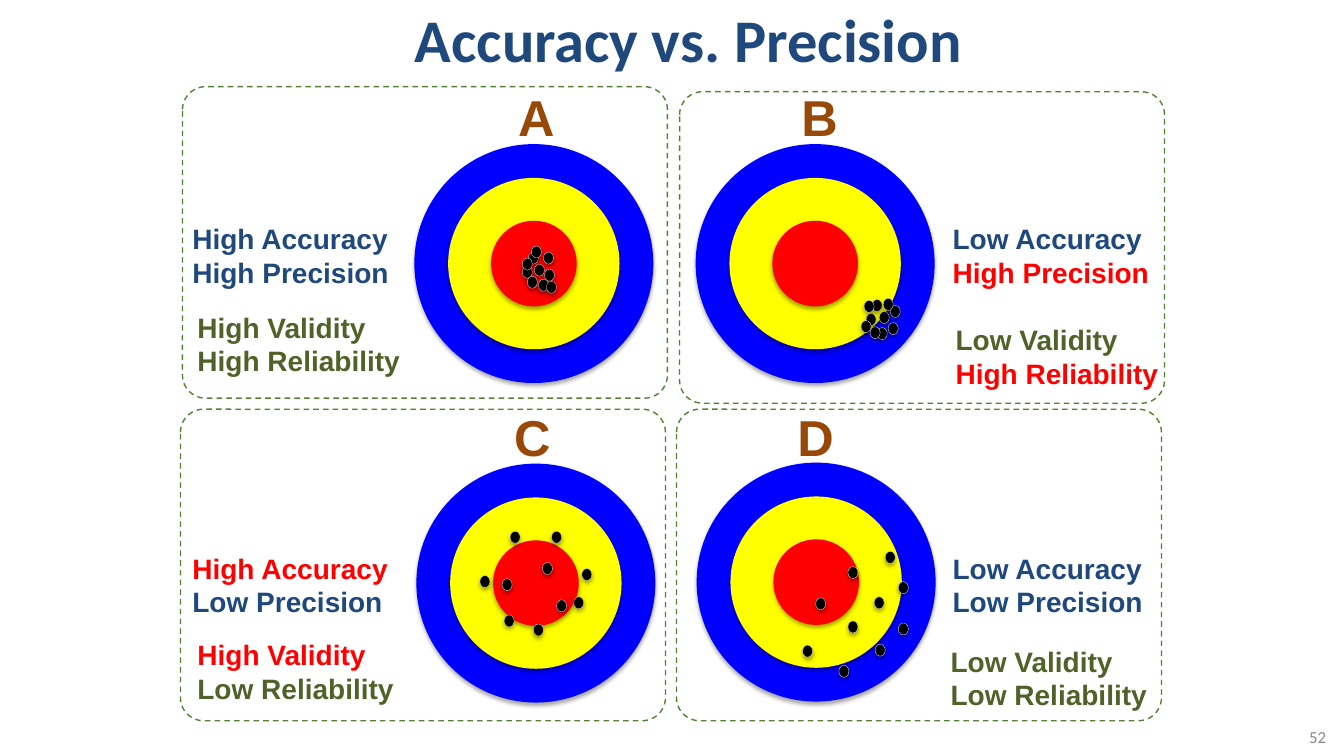
from dataclasses import dataclass

from lxml import etree
from pptx import Presentation
from pptx.dml.color import RGBColor
from pptx.enum.dml import MSO_LINE
from pptx.enum.shapes import MSO_SHAPE
from pptx.enum.text import MSO_ANCHOR, PP_ALIGN
from pptx.oxml.ns import qn
from pptx.util import Inches, Pt

OVAL = MSO_SHAPE.OVAL
ROUNDED = MSO_SHAPE.ROUNDED_RECTANGLE
DASH = MSO_LINE.DASH
TOP, MIDDLE = MSO_ANCHOR.TOP, MSO_ANCHOR.MIDDLE
LEFT, CENTER, RIGHT = PP_ALIGN.LEFT, PP_ALIGN.CENTER, PP_ALIGN.RIGHT

NAVY = RGBColor(0x1F, 0x49, 0x7D)
OLIVE = RGBColor(0x4F, 0x62, 0x28)
BROWN = RGBColor(0x98, 0x48, 0x07)
GREEN = RGBColor(0x54, 0x82, 0x35)
BLUE = RGBColor(0x00, 0x00, 0xFF)
YELLOW = RGBColor(0xFF, 0xFF, 0x00)
RED = RGBColor(0xFF, 0x00, 0x00)
BLACK = RGBColor(0x00, 0x00, 0x00)
PALE_GRAY = RGBColor(0xD9, 0xD9, 0xD9)
PAGE_GRAY = RGBColor(0x89, 0x89, 0x89)

PANEL_SIZE = (4.81, 3.09)
RINGS = [(2.37, BLUE), (1.7, YELLOW), (0.85, RED)]
SHOT_SIZE = (0.1, 0.12)


@dataclass
class Panel:
    letter: str
    corner: tuple
    letter_at: tuple
    target_at: tuple
    accuracy_at: tuple
    accuracy: list
    validity_at: tuple
    validity: list
    shots: list


PANELS = [
    Panel("A", (1.81, 0.86), (3.23, -0.05), (2.3, 0.57),
          (0, 1.29), [("High Accuracy", NAVY), ("High Precision", NAVY)],
          (0.05, 2.17), [("High Validity", OLIVE), ("High Reliability", OLIVE)],
          [(1.13, 1.07), (1.19, 1.19), (1.07, 1.21), (1.23, 1.34), (1.31, 1.36),
           (1.12, 1.31), (1.29, 1.24), (1.16, 1.01), (1.07, 1.13), (1.28, 1.07)]),
    Panel("B", (6.74, 0.91), (1.11, -0.1), (0.16, 0.52),
          (2.61, 1.24), [("Low Accuracy", NAVY), ("High Precision", RED)],
          (2.64, 2.24), [("Low Validity", OLIVE), ("High Reliability", RED)],
          [(1.75, 1.54), (1.82, 1.66), (1.69, 1.68), (1.8, 1.82), (1.93, 1.6),
           (1.91, 1.77), (1.86, 1.53), (1.67, 1.55), (1.64, 1.75), (1.73, 1.81)]),
    Panel("C", (1.79, 4.06), (3.21, -0.08), (2.34, 0.54),
          (0.02, 1.36), [("High Accuracy", RED), ("Low Precision", NAVY)],
          (0.07, 2.22), [("High Validity", RED), ("Low Reliability", OLIVE)],
          [(0.93, 0.67), (1.39, 1.35), (0.63, 1.11), (1.56, 1.32), (0.85, 1.14),
           (0.87, 1.5), (1.16, 1.59), (1.34, 0.67), (1.25, 0.98), (1.64, 1.04)]),
    Panel("D", (6.71, 4.06), (1.1, -0.08), (0.2, 0.53),
          (2.64, 1.36), [("Low Accuracy", NAVY), ("Low Precision", NAVY)],
          (2.62, 2.28), [("Low Validity", OLIVE), ("Low Reliability", OLIVE)],
          [(1.87, 0.88), (1.77, 1.8), (1.18, 1.34), (2, 1.18), (1.76, 1.33),
           (1.5, 1.57), (1.5, 1.03), (2, 1.59), (1.41, 2.01), (1.05, 1.81)]),
]


def offset(origin, step):
    return origin[0] + step[0], origin[1] + step[1]


def add_text(slide, corner, size, lines, points, font="Arial", bold=True,
             align=LEFT, anchor=TOP):
    box = slide.shapes.add_textbox(*map(Inches, corner + size))
    frame = box.text_frame
    frame.word_wrap = True
    frame.vertical_anchor = anchor
    for index, (words, color) in enumerate(lines):
        paragraph = frame.add_paragraph() if index else frame.paragraphs[0]
        paragraph.alignment = align
        run = paragraph.add_run()
        run.text = words
        run.font.name = font
        run.font.size = Pt(points)
        run.font.bold = bold
        run.font.color.rgb = color


def add_disc(shapes, corner, size, color):
    disc = shapes.add_shape(OVAL, *map(Inches, corner + size))
    disc.fill.solid()
    disc.fill.fore_color.rgb = color
    disc.line.fill.background()
    disc.shadow.inherit = False
    effects = disc._element.spPr.find(qn("a:effectLst"))
    shadow = etree.SubElement(effects, qn("a:outerShdw"), blurRad=str(Pt(3.1)),
                              dist=str(Pt(1.8)), dir="5400000", rotWithShape="0")
    shade = etree.SubElement(shadow, qn("a:srgbClr"), val="000000")
    etree.SubElement(shade, qn("a:alpha"), val="35000")
    return disc


def add_target(slide, corner, shots):
    rings = slide.shapes.add_group_shape().shapes
    outer = RINGS[0][0]
    for diameter, color in RINGS:
        inset = (outer - diameter) / 2
        add_disc(rings, offset(corner, (inset, inset)), (diameter, diameter), color)
    for shot in shots:
        mark = add_disc(slide.shapes, offset(corner, shot), SHOT_SIZE, BLACK)
        mark.line.color.rgb = PALE_GRAY
        mark.line.width = Pt(0.25)


def add_panel(slide, panel):
    frame = slide.shapes.add_shape(ROUNDED, *map(Inches, panel.corner + PANEL_SIZE))
    frame.adjustments[0] = 0.074
    frame.shadow.inherit = False
    frame.fill.background()
    frame.line.color.rgb = GREEN
    frame.line.width = Pt(1)
    frame.line.dash_style = DASH

    add_target(slide, offset(panel.corner, panel.target_at), panel.shots)
    add_text(slide, offset(panel.corner, panel.letter_at), (0.65, 0.71),
             [(panel.letter, BROWN)], 36)
    for place, lines in ((panel.accuracy_at, panel.accuracy),
                         (panel.validity_at, panel.validity)):
        add_text(slide, offset(panel.corner, place), (2.3, 0.77), lines, 20)


def main():
    deck = Presentation()
    deck.slide_width, deck.slide_height = Inches(13.33), Inches(7.5)
    slide = deck.slides.add_slide(deck.slide_layouts[6])
    add_text(slide, (2.33, 0), (9, 0.77), [("Accuracy vs. Precision", NAVY)],
             43.2, font="Calibri", align=CENTER, anchor=MIDDLE)
    for panel in PANELS:
        add_panel(slide, panel)
    add_text(slide, (12.2, 7.18), (1.05, 0.26), [("52", PAGE_GRAY)],
             12, font="Calibri", bold=False, align=RIGHT, anchor=MIDDLE)
    deck.save("out.pptx")


if __name__ == "__main__":
    main()
